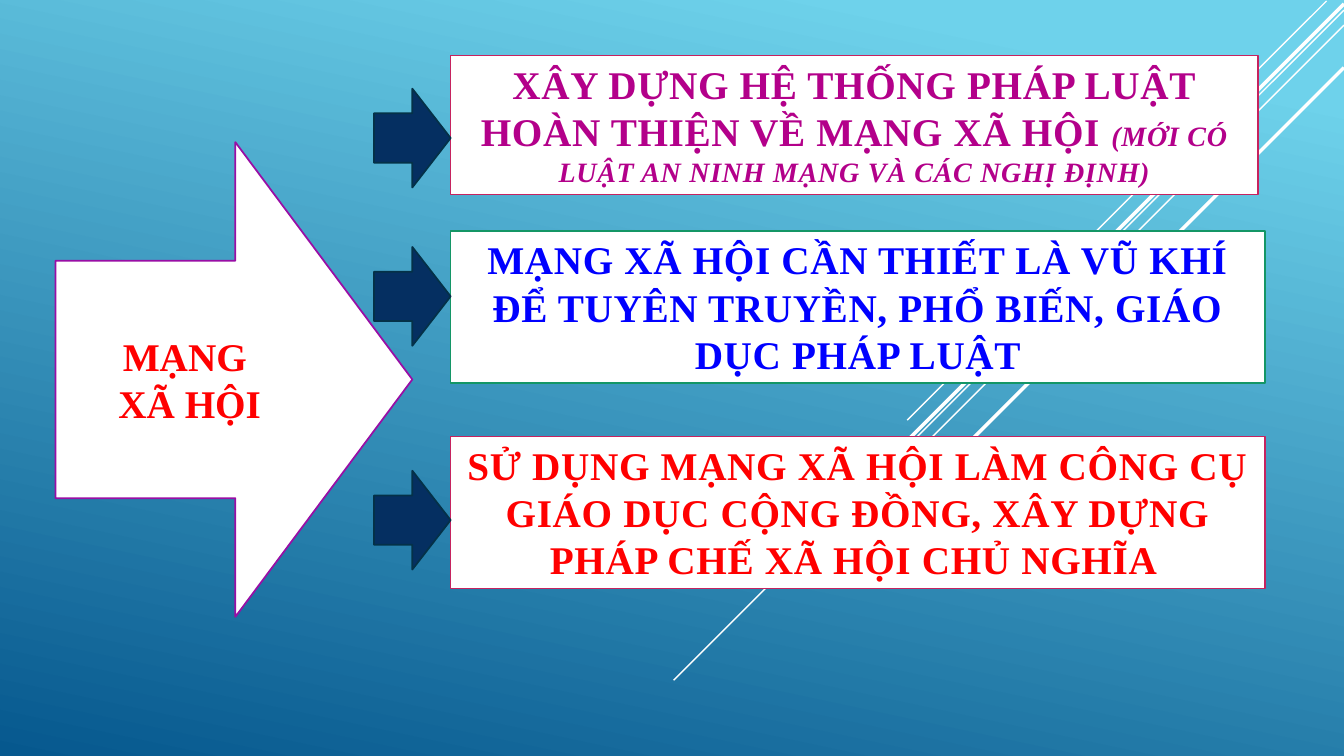
from lxml import etree
from pptx import Presentation
from pptx.dml.color import RGBColor
from pptx.enum.shapes import MSO_CONNECTOR, MSO_SHAPE
from pptx.enum.text import MSO_ANCHOR, MSO_AUTO_SIZE, PP_ALIGN
from pptx.oxml.ns import qn
from pptx.util import Inches, Pt

RECT, ARROW = MSO_SHAPE.RECTANGLE, MSO_SHAPE.RIGHT_ARROW
STRAIGHT = MSO_CONNECTOR.STRAIGHT
TOP, MIDDLE = MSO_ANCHOR.TOP, MSO_ANCHOR.MIDDLE
GROW, FIXED = MSO_AUTO_SIZE.SHAPE_TO_FIT_TEXT, MSO_AUTO_SIZE.NONE
CENTER = PP_ALIGN.CENTER

THEME = {
    "font": "Times New Roman", "big": 28, "small": 20, "edge": 1.25,
    "sky": "6ED2EB", "sea": "06588E", "white": "FFFFFF",
    "navy": "052F61", "ink": "043148", "plum": "B3008A",
    "violet": "990EA5", "rose": "C6235F", "green": "149666",
    "red": "FF0000", "blue": "0000FF",
}

deck = Presentation()
deck.slide_width, deck.slide_height = Inches(13.33), Inches(7.5)
COL, ROW = deck.slide_width / 100, deck.slide_height / 100
slide = deck.slides.add_slide(deck.slide_layouts[6])


def color(name):
    return RGBColor.from_string(THEME[name])


def add_block(kind, left, top, width, height, fill, edge, lines=(), hue="white",
              gap=0, **frame):
    block = slide.shapes.add_shape(
        kind, int(left * COL), int(top * ROW), int(width * COL), int(height * ROW))
    block.shadow.inherit = False
    block.fill.solid()
    block.fill.fore_color.rgb = color(fill)
    block.line.color.rgb = color(edge)
    block.line.width = Pt(THEME["edge"])
    text = block.text_frame
    for key, value in {"word_wrap": True, **frame}.items():
        setattr(text, key, value)
    for row, parts in enumerate(lines):
        para = text.add_paragraph() if row else text.paragraphs[0]
        para.alignment = CENTER
        for words, size, slant in parts:
            run = para.add_run()
            run.text = words
            style = {"name": THEME["font"], "size": Pt(THEME[size]),
                     "bold": True, "italic": slant}
            for key, value in style.items():
                setattr(run.font, key, value)
            run.font.color.rgb = color(hue)
            if gap:
                run._r.get_or_add_rPr().set("spc", str(gap))
    return block


back = slide.background.fill
back.gradient()
back.gradient_angle = 258
for stop, (place, name) in zip(back.gradient_stops, [(0.1, "sky"), (1, "sea")]):
    stop.position = place
    stop.color.rgb = color(name)

rays = [(98.7, 0.13, 31.2, 1), (100, 1.33, 49.88, 1), (100, 3.33, 40.65, 1),
        (100, 0.53, 39.75, 2.5), (100, 8.93, 35.63, 2.5)]
for left, top, reach, weight in rays:
    ray = slide.shapes.add_connector(
        STRAIGHT, int(left * COL), int(top * ROW),
        int((left - reach) * COL), int(top * ROW + reach * COL))
    ray.line.color.rgb = color("white")
    ray.line.width = Pt(weight)
    etree.SubElement(ray._element.spPr, qn("a:effectLst"))

topic = add_block(
    ARROW, 4.13, 18.8, 26.55, 62.8, "white", "violet",
    [[("MẠNG ", "big", False)], [("XÃ HỘI", "big", False)]], "red",
    vertical_anchor=MIDDLE, auto_size=FIXED)
topic.adjustments[1] = 0.496

points = [
    (7.33, 60.08, 18.4, 11.73, "rose", "plum",
     [("XÂY DỰNG HỆ THỐNG PHÁP LUẬT HOÀN THIỆN VỀ MẠNG XÃ HỘI ", "big", False),
      ("(MỚI CÓ LUẬT AN NINH MẠNG VÀ CÁC NGHỊ ĐỊNH)", "small", True)]),
    (30.53, 60.6, 20.13, 32.67, "green", "blue",
     [("MẠNG XÃ HỘI CẦN THIẾT LÀ VŨ KHÍ ĐỂ TUYÊN TRUYỀN, PHỔ BIẾN, "
       "GIÁO DỤC PHÁP LUẬT", "big", False)]),
    (57.73, 60.6, 20.13, 62.27, "rose", "red",
     [("SỬ DỤNG MẠNG XÃ HỘI LÀM CÔNG CỤ GIÁO DỤC CỘNG ĐỒNG, XÂY DỰNG "
       "PHÁP CHẾ XÃ HỘI CHỦ NGHĨA ", "big", False)]),
]
for top, width, height, tip, edge, hue, parts in points:
    add_block(RECT, 33.53, top, width, height, "white", edge, [parts], hue, 50,
              vertical_anchor=TOP, auto_size=GROW)
    add_block(ARROW, 27.83, tip, 5.7, 13.07, "navy", "ink")

deck.save("out.pptx")
